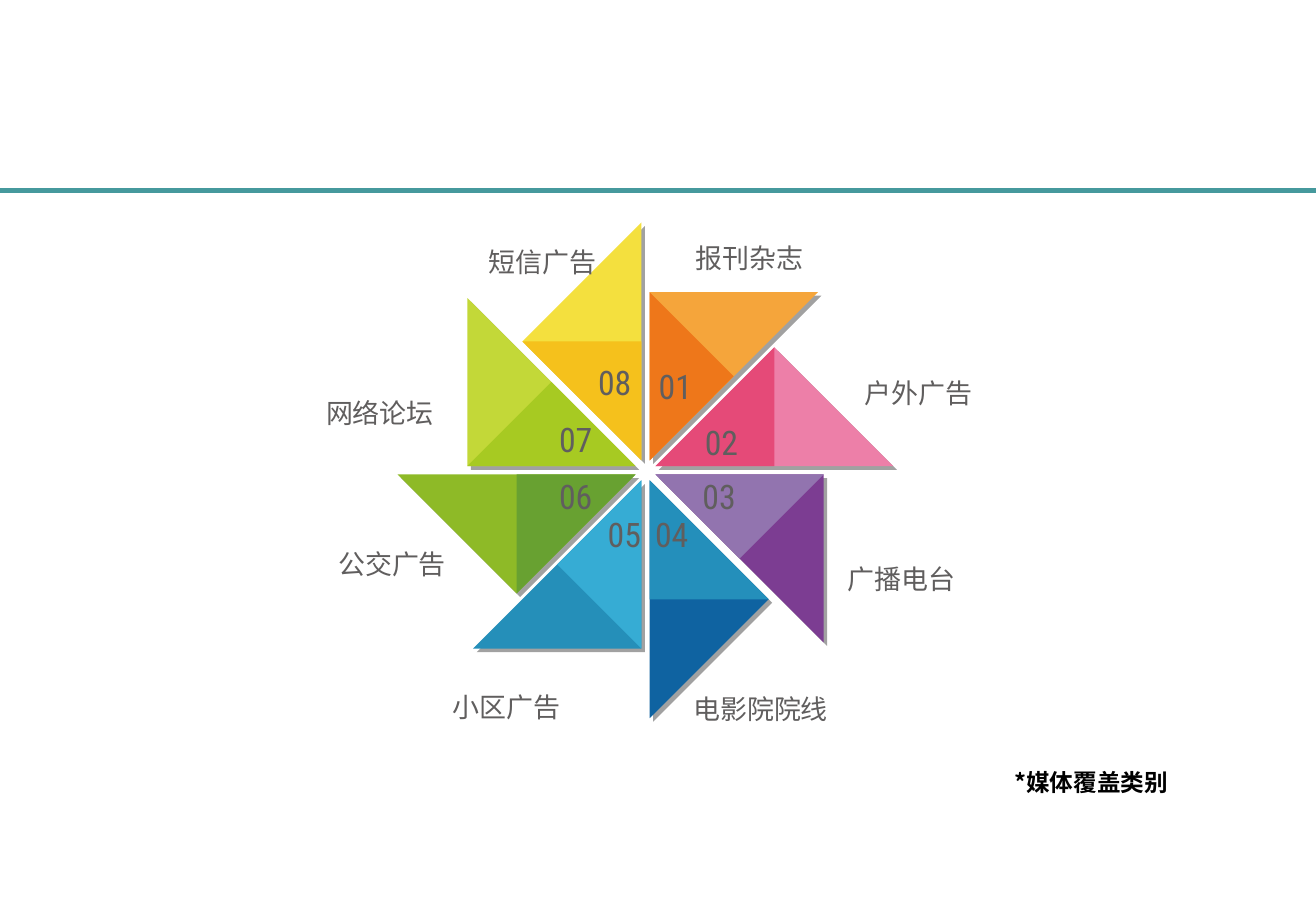
import dataclasses
import math
import typing

import lxml.etree
import pptx
import pptx.dml.color
import pptx.enum.shapes
import pptx.enum.text
import pptx.oxml.ns
import pptx.shapes.autoshape
import pptx.slide
import pptx.util

Pt = pptx.util.Pt
Align = pptx.enum.text.PP_ALIGN
Point = tuple[float, float]
qn = pptx.oxml.ns.qn


@dataclasses.dataclass(frozen=True)
class Theme:
    rule: str = "46999D"
    text: str = "605E5E"
    note: str = "000000"
    shade: str = "000000"
    font: str = "Noto Sans CJK SC"
    digit: str = "Roboto Condensed"
    label_size: float = 16
    digit_size: float = 20
    note_size: float = 14


@dataclasses.dataclass(frozen=True)
class Blade:
    label: str
    spot: Point
    digit: Point
    inner: str
    outer: str
    align: Align = Align.LEFT


@dataclasses.dataclass(frozen=True)
class Style:
    font: str
    size: float
    color: str
    align: Align = Align.LEFT
    bold: bool = False
    wrap: bool = True


THEME = Theme()
WIDTH, HEIGHT = 780, 540
CENTER: Point = (382.6, 278.8)
GAP = 6.4
LEG = 99.7

BLADES = [
    Blade("报刊杂志", (405.4, 139.7), (380.2, 213.1), "EE771A", "F5A53B"),
    Blade("户外广告", (505.4, 219.6), (407.5, 246.2), "E54A78", "ED7FA8"),
    Blade("广播电台", (495.4, 329.8), (406.1, 278.6), "9274AF", "7C3D92"),
    Blade("电影院院线", (403.9, 406.8), (378, 301), "248FBB", "0F63A1"),
    Blade("小区广告", (261.4, 406.1), (349.9, 301), "36ACD4", "258FB9"),
    Blade("公交广告", (193, 321.1), (321.1, 278.6), "68A131", "8EBA27", Align.RIGHT),
    Blade("网络论坛", (185.8, 231.8), (321.1, 244.8), "A7CA22", "C3D838", Align.RIGHT),
    Blade("短信广告", (282.2, 141.8), (344.2, 211), "F5C11C", "F4E03E", Align.CENTER),
]


def paint(color: str) -> pptx.dml.color.RGBColor:
    return pptx.dml.color.RGBColor.from_string(color)


def move(start: Point, size: float, angle: float) -> Point:
    turn = math.radians(angle)
    return start[0] + size * math.cos(turn), start[1] + size * math.sin(turn)


def add_shade(shape: pptx.shapes.autoshape.Shape) -> None:
    effects = shape.element.spPr.find(qn("a:effectLst"))
    shade = lxml.etree.SubElement(
        effects, qn("a:outerShdw"), blurRad="0", dist=str(Pt(3)),
        dir="2700000", algn="tl", rotWithShape="0")
    color = lxml.etree.SubElement(shade, qn("a:srgbClr"), val=THEME.shade)
    lxml.etree.SubElement(color, qn("a:alpha"), val="36000")


def add_face(
    slide: pptx.slide.Slide, points: typing.Sequence[Point], color: str
) -> pptx.shapes.autoshape.Shape:
    ends = [(Pt(x), Pt(y)) for x, y in points]
    builder = slide.shapes.build_freeform(*ends[0])
    builder.add_line_segments(ends[1:], close=True)
    face = builder.convert_to_shape()
    face.fill.solid()
    face.fill.fore_color.rgb = paint(color)
    face.line.fill.background()
    face.shadow.inherit = False
    return face


def add_blade(slide: pptx.slide.Slide, blade: Blade, index: int) -> None:
    angle = 45 * index - 90
    tip = move(CENTER, GAP, angle + 22.5)
    corner = move(tip, LEG, angle)
    outer = move(tip, LEG * math.sqrt(2), angle + 45)
    middle = move(tip, LEG / math.sqrt(2), angle + 45)
    add_shade(add_face(slide, [tip, corner, outer], blade.outer))
    add_face(slide, [tip, corner, middle], blade.inner)


def add_text(
    slide: pptx.slide.Slide, text: str, spot: Point, size: Point, style: Style
) -> None:
    box = slide.shapes.add_textbox(*map(Pt, spot + size))
    frame = box.text_frame
    frame.word_wrap = style.wrap
    frame.auto_size = pptx.enum.text.MSO_AUTO_SIZE.SHAPE_TO_FIT_TEXT
    line = frame.paragraphs[0]
    line.text = text
    line.alignment = style.align
    font = line.font
    font.name = style.font
    font.size = Pt(style.size)
    font.bold = style.bold
    font.color.rgb = paint(style.color)
    for props in box.element.iter(qn("a:defRPr")):
        lxml.etree.SubElement(props, qn("a:ea"), typeface=style.font)


def add_rule(slide: pptx.slide.Slide) -> None:
    rule = slide.shapes.add_connector(
        pptx.enum.shapes.MSO_CONNECTOR.STRAIGHT, Pt(0), Pt(113), Pt(WIDTH), Pt(113))
    rule.line.color.rgb = paint(THEME.rule)
    rule.line.width = Pt(3)
    lxml.etree.SubElement(rule.element.spPr, qn("a:effectLst"))


def main() -> None:
    deck = pptx.Presentation()
    deck.slide_width, deck.slide_height = Pt(WIDTH), Pt(HEIGHT)
    slide = deck.slides.add_slide(deck.slide_layouts[6])
    add_rule(slide)
    for index, blade in enumerate(BLADES):
        add_blade(slide, blade, index)
    digit = Style(THEME.digit, THEME.digit_size, THEME.text, Align.CENTER)
    for index, blade in enumerate(BLADES, 1):
        label = Style(THEME.font, THEME.label_size, THEME.text, blade.align, wrap=False)
        width = THEME.label_size * len(blade.label) + 14.4
        add_text(slide, blade.label, blade.spot, (width, 26.6), label)
        add_text(slide, f"{index:02}", blade.digit, (40.3, 31.5), digit)
    note = Style(THEME.font, THEME.note_size, THEME.note, bold=True)
    add_text(slide, "*媒体覆盖类别", (594, 451.4), (128, 25), note)
    deck.save("out.pptx")


if __name__ == "__main__":
    main()
